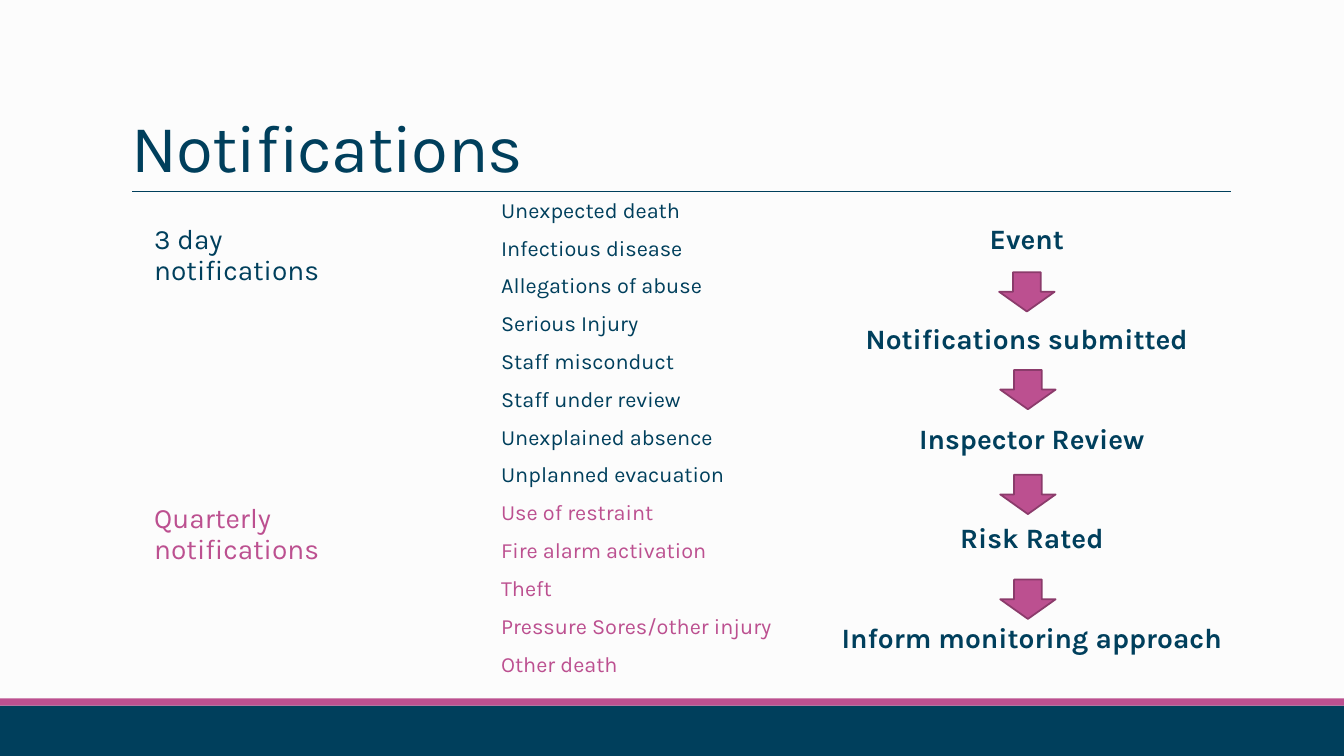
"""Build the Notifications slide: two reporting groups, their events and the review flow."""
from pptx import Presentation
from pptx.dml.color import RGBColor
from pptx.enum.shapes import MSO_CONNECTOR, MSO_SHAPE
from pptx.enum.text import MSO_ANCHOR, MSO_AUTO_SIZE, PP_ALIGN
from pptx.oxml.ns import qn
from pptx.util import Inches, Pt
from lxml import etree

THEME = {
    "font": "Karla",
    "paper": RGBColor.from_string("FCFCFC"),
    "navy": RGBColor.from_string("003F5C"),
    "pink": RGBColor.from_string("BC5090"),
    "plum": RGBColor.from_string("8B3B6B"),
    "title": Pt(48),
    "label": Pt(20),
    "list": Pt(15.5),
}


def write(sp, box, lines, size, margin=0, anchor=MSO_ANCHOR.TOP, bold=False, **spacing):
    """Place a text shape and fill it with (text, colour, indent) lines."""
    sp.left, sp.top, sp.width, sp.height = [Inches(v) for v in box]
    tf = sp.text_frame
    frame = {"word_wrap": True, "auto_size": MSO_AUTO_SIZE.NONE, "vertical_anchor": anchor,
             "margin_left": Inches(margin), "margin_right": Inches(margin),
             "margin_top": Inches(0.05), "margin_bottom": Inches(0.05)}
    for name, value in frame.items():
        setattr(tf, name, value)
    for i, (text, color, indent) in enumerate(lines):
        p = tf.paragraphs[0] if i == 0 else tf.add_paragraph()
        pPr = p._p.get_or_add_pPr()
        pPr.set("marL", str(Inches(indent)))
        pPr.set("indent", "0")
        etree.SubElement(pPr, qn("a:buNone"))
        for name, value in spacing.items():
            setattr(p, name, value)
        if i == 0:
            p.space_before = Pt(0)
        r = p.add_run()
        r.text = text
        for name, value in {"name": THEME["font"], "size": THEME[size], "bold": bold}.items():
            setattr(r.font, name, value)
        r.font.color.rgb = THEME[color]


def add_block(s, kind, box, fill, line=None):
    """Add a filled preset shape with an optional outline."""
    sp = s.shapes.add_shape(kind, *[Inches(v) for v in box])
    sp.shadow.inherit = False
    sp.fill.solid()
    sp.fill.fore_color.rgb = THEME[fill]
    if line:
        sp.line.color.rgb = THEME[line]
        sp.line.width = Pt(1.25)
    else:
        sp.line.fill.background()


prs = Presentation()
prs.slide_width, prs.slide_height = Inches(13.33), Inches(7.5)
s = prs.slides.add_slide(prs.slide_layouts.get_by_name("Title and Content"))
for sp in list(s.placeholders):
    if sp.placeholder_format.idx > 1:
        sp.element.getparent().remove(sp.element)
s.background.fill.solid()
s.background.fill.fore_color.rgb = THEME["paper"]

add_block(s, MSO_SHAPE.RECTANGLE, (0, 7, 13.33, 0.5), "navy")
add_block(s, MSO_SHAPE.RECTANGLE, (0, 6.93, 13.33, 0.07), "pink")
rule = s.shapes.add_connector(MSO_CONNECTOR.STRAIGHT, Inches(1.31), Inches(1.9), Inches(12.21), Inches(1.9))
rule.line.color.rgb = THEME["navy"]
rule.line.width = Pt(0.5)
etree.SubElement(rule._element.spPr, qn("a:effectLst"))

title = s.shapes.title
write(title, (1.2, 0.31, 11, 1.59), [("Notifications", "navy", 0)], "title",
      margin=0.1, anchor=MSO_ANCHOR.BOTTOM, line_spacing=0.85, alignment=PP_ALIGN.LEFT)
title.text_frame.paragraphs[0].runs[0].font._element.set("spc", "-50")

events = {
    "navy": ["Unexpected death", "Infectious disease", "Allegations of abuse", "Serious Injury",
             "Staff misconduct", "Staff under review", "Unexplained absence", "Unplanned evacuation"],
    "pink": ["Use of restraint", "Fire alarm activation", "Theft", "Pressure Sores/other injury", "Other death"],
}
write(s.placeholders[1], (4.87, 1.97, 2.8, 4.99),
      [(text, color, 0.1) for color, group in events.items() for text in group], "list",
      line_spacing=0.7, space_before=Pt(12), space_after=Pt(2))

groups = s.shapes.add_textbox(0, 0, 0, 0)
write(groups, (1.43, 2.19, 2.1, 4.17),
      [("3 day notifications", "navy", 0.1), ("Quarterly notifications", "pink", 0.1)], "label",
      line_spacing=0.9, space_before=Pt(154), space_after=Pt(2))

steps = [("Event", 0), ("Notifications submitted", 0), ("Inspector Review", 0.1),
         ("Risk Rated", 0.1), ("Inform monitoring approach", 0.1)]
flow = s.shapes.add_textbox(0, 0, 0, 0)
write(flow, (8.17, 2.19, 4.03, 4.77), [(text, "navy", indent) for text, indent in steps], "label",
      bold=True, alignment=PP_ALIGN.CENTER, line_spacing=0.9, space_before=Pt(47.6), space_after=Pt(2))

for left, top in [(9.91, 2.7), (9.92, 3.67), (9.92, 4.71), (9.92, 5.75)]:
    add_block(s, MSO_SHAPE.DOWN_ARROW, (left, top, 0.55, 0.39), "pink", "plum")

prs.save("out.pptx")
